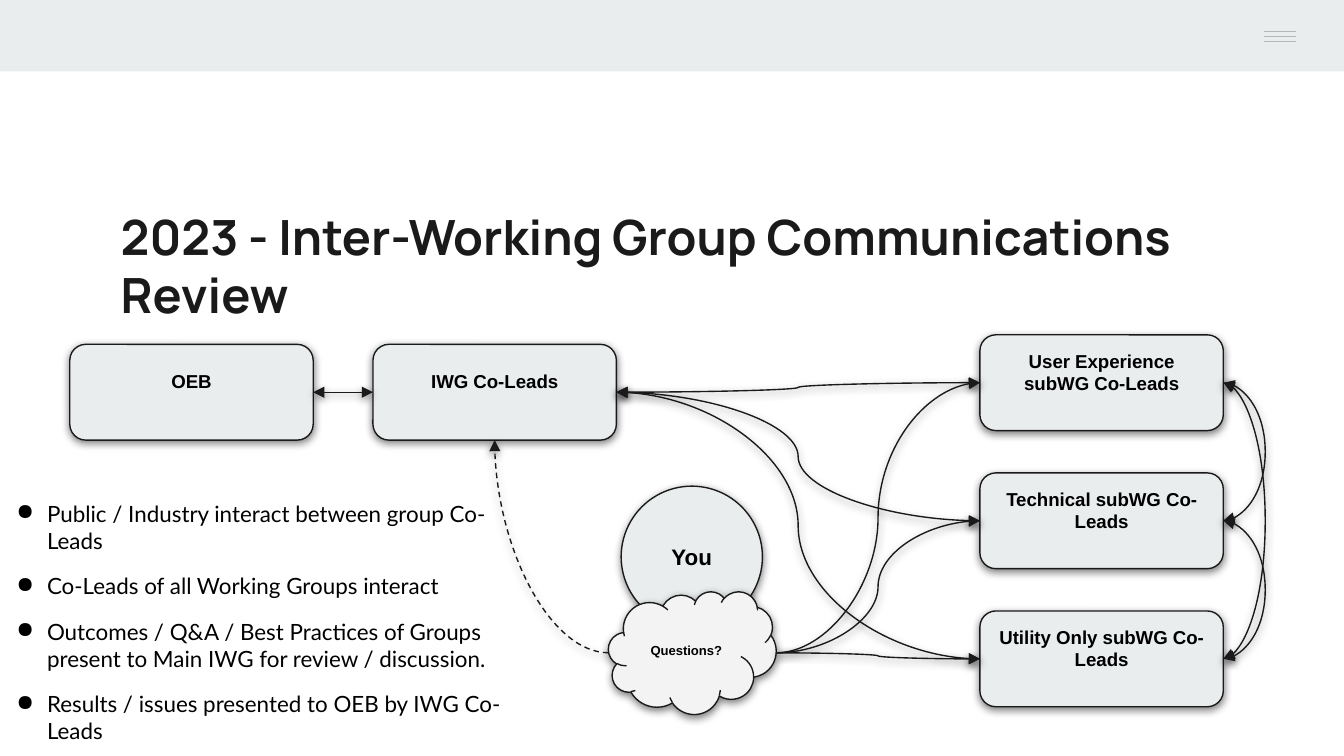
from dataclasses import dataclass

from lxml.etree import SubElement
from pptx import Presentation
from pptx.dml.color import RGBColor
from pptx.enum.dml import MSO_LINE
from pptx.enum.shapes import MSO_CONNECTOR as Link, MSO_SHAPE as Shape
from pptx.enum.text import MSO_ANCHOR as Anchor, MSO_AUTO_SIZE as AutoSize, PP_ALIGN as Align
from pptx.oxml.ns import qn
from pptx.util import Cm, Emu, Pt

COLOURS = {"ink": "1A1A1A", "text": "000000", "panel": "E9EDEE",
           "cloud": "F3F3F3", "menu": "B7B7B7"}
INSET = 0.25
LOOP_WIDTH = Emu(600)
POINTS = [
    "Public / Industry interact between group Co-Leads",
    "Co-Leads of all Working Groups interact",
    "Outcomes / Q&A / Best Practices of Groups present to Main IWG for review / discussion.",
    "Results / issues presented to OEB by IWG Co-Leads",
]


@dataclass
class Box:
    """A region of the slide, in centimetres."""
    left: float
    top: float
    width: float
    height: float

    @property
    def lengths(self):
        """Return the four measures as lengths."""
        return [Cm(v) for v in (self.left, self.top, self.width, self.height)]

    @property
    def west(self):
        """Return the middle of the left edge."""
        return self.left, self.top + self.height / 2

    @property
    def east(self):
        """Return the middle of the right edge."""
        return self.left + self.width, self.top + self.height / 2

    @property
    def south(self):
        """Return the middle of the bottom edge."""
        return self.left + self.width / 2, self.top + self.height


def colour(name):
    """Look up a named colour."""
    return RGBColor.from_string(COLOURS[name])


def set_font(para, face, size, name="text", bold=False):
    """Format a whole paragraph."""
    font = para.font
    font.name, font.size, font.bold = face, Pt(size), bold
    font.color.rgb = colour(name)


def set_insets(frame, bottom=INSET):
    """Give a text frame its wrapping and margins."""
    frame.word_wrap = True
    frame.margin_left = frame.margin_right = frame.margin_top = Cm(INSET)
    frame.margin_bottom = Cm(bottom)


def set_effects(item, shadow=True):
    """Give an item a soft shadow below it, or none."""
    effects = SubElement(item._element.spPr, qn("a:effectLst"))
    if shadow:
        outer = SubElement(effects, qn("a:outerShdw"), blurRad=str(Pt(4.5)),
                           dist=str(Pt(1.5)), dir="5400000", algn="bl", rotWithShape="0")
        black = SubElement(outer, qn("a:srgbClr"), val=COLOURS["text"])
        SubElement(black, qn("a:alpha"), val="50000")


def add_node(shapes, kind, box, label, size, fill="panel", bottom=INSET):
    """Draw one labelled shape of the diagram."""
    node = shapes.add_shape(kind, *box.lengths)
    node.fill.solid()
    node.fill.fore_color.rgb = colour(fill)
    node.line.color.rgb = colour("ink")
    node.line.width = Pt(0.75)
    set_effects(node)
    frame = node.text_frame
    set_insets(frame, bottom)
    frame.vertical_anchor = Anchor.MIDDLE
    para = frame.paragraphs[0]
    para.text, para.alignment = label, Align.CENTER
    set_font(para, "Arial", size, bold=True)


def add_line(page, kind, start, end, name):
    """Draw a thin connector between two points."""
    line = page.shapes.add_connector(kind, *[Cm(v) for v in (*start, *end)])
    line.line.color.rgb = colour(name)
    line.line.width = Pt(0.75)
    return line


def add_flow(page, start, end, both=False, loop=False, bend=False):
    """Draw a curved arrow: two-headed, looping to the right, or a dashed bend."""
    flow = add_line(page, Link.CURVE, start, end, "ink")
    shape_props = flow._element.spPr
    geometry = shape_props.find(qn("a:prstGeom"))
    if loop:
        flow.end_x = flow.begin_x + LOOP_WIDTH
        guides = geometry.find(qn("a:avLst"))
        reach = round(Cm(0.66) / LOOP_WIDTH * 100000)
        SubElement(guides, qn("a:gd"), name="adj1", fmla=f"val {reach}")
    if bend:
        geometry.set("prst", "curvedConnector2")
        flow.line.dash_style = MSO_LINE.DASH
    for end_name in (["headEnd"] if both else []) + ["tailEnd"]:
        SubElement(shape_props.find(qn("a:ln")), qn(f"a:{end_name}"), type="triangle")
    set_effects(flow)


def add_banner(page, box):
    """Draw the top band with its three-line menu mark."""
    band = page.shapes.add_shape(Shape.RECTANGLE, *box.lengths)
    band.shadow.inherit = False
    band.fill.solid()
    band.fill.fore_color.rgb = colour("panel")
    band.line.fill.background()
    right = box.left + box.width - 0.91
    for row in range(3):
        y = box.top + 0.6 + row * 0.09
        mark = add_line(page, Link.STRAIGHT, (right - 0.61, y), (right, y), "menu")
        set_effects(mark, shadow=False)


def add_title(page, box):
    """Place and format the title."""
    title = page.shapes.title
    title.left, title.top, title.width, title.height = box.lengths
    frame = title.text_frame
    set_insets(frame)
    frame.auto_size = AutoSize.NONE
    frame.vertical_anchor = Anchor.TOP
    para = frame.paragraphs[0]
    para.text = "2023 - Inter-Working Group Communications Review"
    para.alignment = Align.LEFT
    set_font(para, "Manrope", 26, "ink", bold=True)


def add_diagram(page, box):
    """Draw the groups and the flows between them."""
    width, height = 4.6, 1.81
    board, leads = [Box(box.left + i * 5.73, box.top + 0.18, width, height) for i in range(2)]
    teams = [Box(box.left + 17.2, box.top + i * 2.61, width, height) for i in range(3)]
    labels = ["OEB", "IWG Co-Leads", "User Experience subWG Co-Leads",
              "Technical subWG Co-Leads", "Utility Only subWG Co-Leads"]
    for place, label in zip([board, leads, *teams], labels):
        add_node(page.shapes, Shape.ROUNDED_RECTANGLE, place, label, 10, bottom=0.66)

    for team in teams:
        add_flow(page, leads.east, team.west, both=True)
    add_flow(page, board.east, leads.west, both=True)
    for low, high in ((2, 0), (1, 0), (2, 1)):
        add_flow(page, teams[low].east, teams[high].east, both=True, loop=True)

    you = Box(box.left + 10.42, box.top + 2.86, 2.67, 2.67)
    cloud = Box(box.left + 10.18, box.top + 4.85, 3.17, 2.32)
    visitor = page.shapes.add_group_shape()
    add_node(visitor.shapes, Shape.OVAL, you, "You", 12)
    add_node(visitor.shapes, Shape.CLOUD, cloud, "Questions?", 7, "cloud")
    for team in teams:
        add_flow(page, cloud.east, team.west)
    add_flow(page, cloud.west, leads.south, bend=True)


def add_points(page, box):
    """Write the bulleted notes."""
    frame = page.shapes.add_textbox(*box.lengths).text_frame
    set_insets(frame)
    for index, text in enumerate(POINTS):
        para = frame.add_paragraph() if index else frame.paragraphs[0]
        para.text = text
        props = para._p.get_or_add_pPr()
        props.set("marL", str(Cm(0.64)))
        props.set("indent", str(-Cm(0.58)))
        if index:
            para.space_before = Pt(10)
        tint = SubElement(props, qn("a:buClr"))
        SubElement(tint, qn("a:srgbClr"), val=COLOURS["text"])
        SubElement(props, qn("a:buChar"), char="●")
        set_font(para, "Lato", 12)


def main():
    """Build and save the deck."""
    deck = Presentation()
    deck.slide_width, deck.slide_height = Cm(25.4), Cm(14.29)
    page = deck.slides.add_slide(deck.slide_layouts[5])
    add_banner(page, Box(0, 0, 25.4, 1.35))
    add_title(page, Box(2.03, 3.66, 21.36, 1.5))
    add_diagram(page, Box(1.32, 6.33, 21.8, 7.17))
    add_points(page, Box(0, 9.2, 9.83, 5.18))
    deck.save("out.pptx")


if __name__ == "__main__":
    main()
